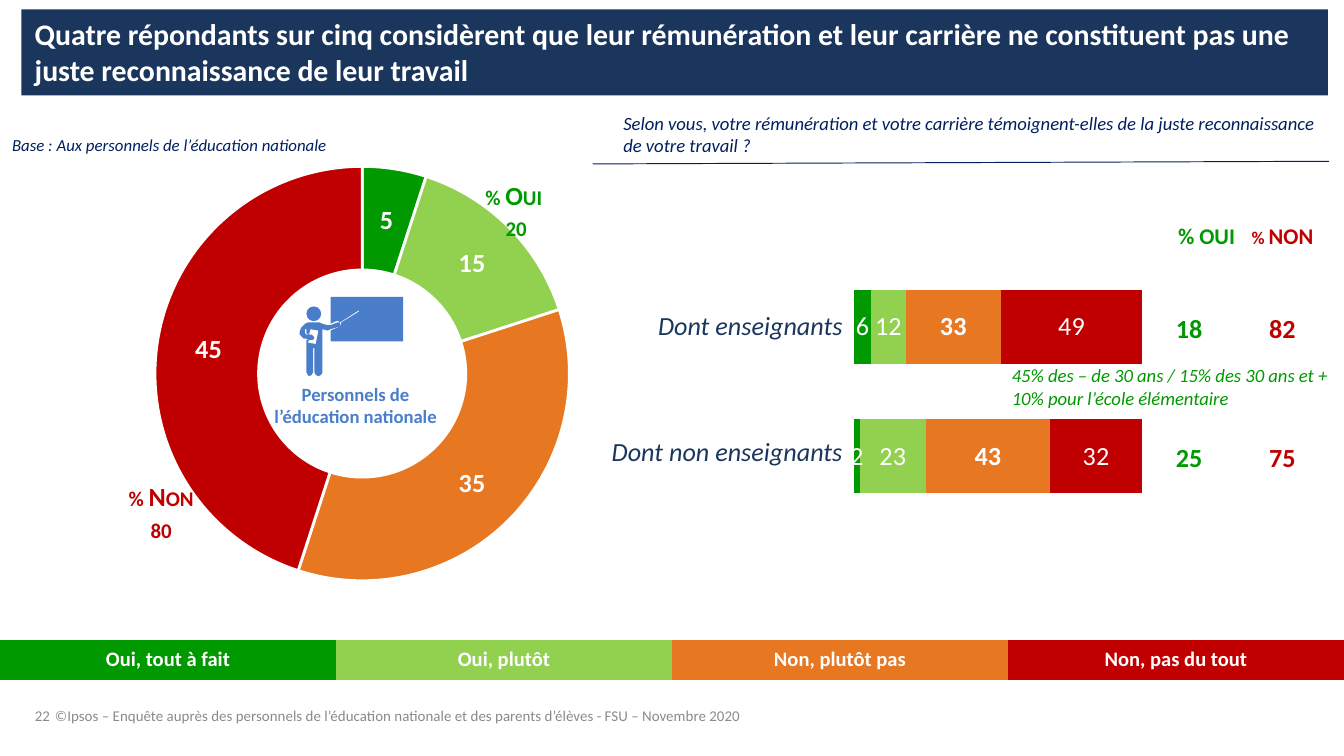
from lxml import etree
from pptx import Presentation
from pptx.chart.data import CategoryChartData
from pptx.dml.color import RGBColor
from pptx.enum.chart import XL_CHART_TYPE
from pptx.enum.shapes import MSO_CONNECTOR, MSO_SHAPE
from pptx.enum.text import MSO_ANCHOR, PP_ALIGN
from pptx.oxml import parse_xml
from pptx.oxml.ns import nsdecls, qn
from pptx.util import Inches, Pt

FONT = "Calibri"
COLORS = {
    "yes": "009900", "rather_yes": "92D050", "rather_no": "E87722", "no": "C00000",
    "navy": "1B365D", "ink": "002060", "icon": "4A7ECA", "grey": "888B8D",
    "white": "FFFFFF",
}
ANSWERS = {"yes": "Oui, tout à fait", "rather_yes": "Oui, plutôt",
           "rather_no": "Non, plutôt pas", "no": "Non, pas du tout"}
PLAIN_TABLE = "{2D5ABB26-0587-4C30-8999-92F81FD0307C}"

# Teacher icon outlines, in hundredths of an inch
BOARD = [(252, 239), (253, 240), (267, 231), (267, 232), (254, 240), (253, 243),
         (246, 246), (246, 254), (300, 254), (300, 221), (246, 221), (246, 241),
         (250, 239)]
TEACHER = [(226, 252), (228, 252), (230, 253), (233, 253), (234, 251), (232, 249),
           (228, 249), (227, 248), (227, 245), (228, 245), (228, 248), (230, 249),
           (231, 245), (237, 246), (235, 256), (229, 255), (230, 253), (228, 253),
           (228, 277), (229, 279), (230, 280), (232, 279), (233, 277), (233, 259),
           (234, 259), (234, 277), (235, 279), (237, 280), (239, 279), (240, 277),
           (240, 245), (244, 246), (246, 245), (253, 243), (253, 240), (251, 240),
           (246, 242), (244, 242), (240, 241), (238, 240), (229, 240), (227, 241),
           (224, 244), (223, 247), (223, 249)]


def color(name):
    return RGBColor.from_string(COLORS[name])


def style_font(font, size, tint, bold=False, italic=False):
    font.name, font.size = FONT, Pt(size)
    font.bold, font.italic = bold, italic
    font.color.rgb = color(tint)


def write(frame, text, size=10, tint="ink", bold=False, italic=False,
          small_caps=False, align=PP_ALIGN.LEFT):
    """Each newline starts a paragraph; a vertical tab breaks the line."""
    for i, line in enumerate(text.split("\n")):
        paragraph = frame.add_paragraph() if i else frame.paragraphs[0]
        paragraph.alignment = align
        for j, part in enumerate(line.split("\v")):
            if j:
                paragraph.add_line_break()
            run = paragraph.add_run()
            run.text = part
            style_font(run.font, size, tint, bold, italic)
            if small_caps:
                run._r.get_or_add_rPr().set("cap", "small")


class SurveySlide:
    def __init__(self, slide):
        self.shapes = slide.shapes

    def text(self, box, text, anchor=MSO_ANCHOR.TOP, insets=(0.1, 0.05, 0.1, 0.05),
             **style):
        frame = self.shapes.add_textbox(*map(Inches, box)).text_frame
        self.set_frame(frame, anchor, insets)
        write(frame, text, **style)

    def set_frame(self, frame, anchor, insets):
        frame.word_wrap, frame.vertical_anchor = True, anchor
        (frame.margin_left, frame.margin_top,
         frame.margin_right, frame.margin_bottom) = map(Inches, insets)

    def paint(self, shape, tint):
        shape.shadow.inherit = False
        shape.fill.solid()
        shape.fill.fore_color.rgb = color(tint)
        shape.line.fill.background()

    def shape(self, kind, box, tint):
        shape = self.shapes.add_shape(kind, *map(Inches, box))
        self.paint(shape, tint)
        return shape

    def outline(self, points, tint):
        builder = self.shapes.build_freeform(*points[0], scale=Inches(0.01))
        builder.add_line_segments(points[1:], close=True)
        self.paint(builder.convert_to_shape(), tint)

    def line(self, start, end, tint, width):
        rule = self.shapes.add_connector(
            MSO_CONNECTOR.STRAIGHT, *map(Inches, start + end))
        rule.line.color.rgb, rule.line.width = color(tint), Pt(width)
        etree.SubElement(rule._element.spPr, qn("a:effectLst"))

    def table(self, box, heights, rows):
        """Each cell is (text, fill, insets, style)."""
        table = self.shapes.add_table(
            len(rows), len(rows[0]), *map(Inches, box)).table
        table.first_row = table.horz_banding = False
        table._tbl.tblPr.find(qn("a:tableStyleId")).text = PLAIN_TABLE
        for row, height, contents in zip(table.rows, heights, rows):
            row.height = Inches(height)
            for cell, (text, fill, insets, style) in zip(row.cells, contents):
                cell.vertical_anchor = MSO_ANCHOR.MIDDLE
                (cell.margin_left, cell.margin_top,
                 cell.margin_right, cell.margin_bottom) = map(Inches, insets)
                if fill:
                    cell.fill.solid()
                    cell.fill.fore_color.rgb = color(fill)
                else:
                    cell.fill.background()
                write(cell.text_frame, text, bold=True, align=PP_ALIGN.CENTER, **style)

    def chart(self, kind, box, categories, series):
        data = CategoryChartData()
        data.categories = categories
        for i, values in enumerate(series, 1):
            data.add_series(f"Series {i}", values)
        chart = self.shapes.add_chart(kind, *map(Inches, box), data).chart
        chart.has_legend = chart.has_title = False
        style_font(chart.font, 10, "ink")
        return chart

    def labels(self, series, bold):
        series.data_labels.show_value = True
        style_font(series.data_labels.font, 14, "white", bold)

    def doughnut(self, box, values):
        chart = self.chart(XL_CHART_TYPE.DOUGHNUT, box, "1234", [values])
        ring = chart.plots[0].series[0]
        self.labels(ring, True)
        for i, tint in enumerate(ANSWERS):
            part = ring.points[i].format
            part.fill.solid()
            part.fill.fore_color.rgb = color(tint)
            part.line.color.rgb, part.line.width = color("white"), Pt(1.5)
        chart._chartSpace.find(".//" + qn("c:holeSize")).set("val", "65")

    def stacked_bars(self, box, series):
        chart = self.chart(XL_CHART_TYPE.BAR_STACKED_100, box, "12", series)
        plot = chart.plots[0]
        plot.gap_width, plot.overlap = 75, 100
        for part, tint in zip(plot.series, ANSWERS):
            part.format.fill.solid()
            part.format.fill.fore_color.rgb = color(tint)
            self.labels(part, tint == "rather_no")
        chart.category_axis.reverse_order = True
        chart.value_axis.has_major_gridlines = False
        chart.value_axis.minimum_scale, chart.value_axis.maximum_scale = 0, 1
        chart.category_axis.visible = chart.value_axis.visible = False
        # Leave room for the row names on the left
        area = chart._chartSpace.find(".//" + qn("c:plotArea"))
        for old in area.findall(qn("c:layout")):
            area.remove(old)
        sizes = "".join(f'<c:{tag} val="{value}"/>' for tag, value in
                        (("x", 0.28), ("y", 0), ("w", 0.72), ("h", 1)))
        area.insert(0, parse_xml(
            f'<c:layout {nsdecls("c")}><c:manualLayout><c:layoutTarget val="inner"/>'
            f'<c:xMode val="edge"/><c:yMode val="edge"/>{sizes}'
            '</c:manualLayout></c:layout>'))


def main():
    deck = Presentation()
    deck.slide_width, deck.slide_height = Inches(10), Inches(10 * 9 / 16)
    page = SurveySlide(deck.slides.add_slide(deck.slide_layouts[6]))
    middle, center = MSO_ANCHOR.MIDDLE, PP_ALIGN.CENTER

    # Overall result
    page.doughnut((0.85, 1.1, 3.69, 3.36), (5, 15, 35, 45))

    # Title, question and base
    title = page.shape(MSO_SHAPE.RECTANGLE, (0.16, 0.07, 9.72, 0.64), "navy").text_frame
    page.set_frame(title, MSO_ANCHOR.TOP, (0.1, 0.05, 0.1, 0.05))
    write(title, "Quatre répondants sur cinq considèrent que leur rémunération et leur "
          "carrière ne constituent pas une juste reconnaissance de leur travail",
          size=16, tint="white", bold=True)
    page.text((4.54, 0.75, 5.46, 0.49), "Selon vous, votre rémunération et votre carrière "
              "témoignent-elles de la juste reconnaissance de votre travail ?",
              anchor=middle, italic=True)
    page.line((4.41, 1.22), (9.89, 1.2), "ink", 0.5)
    page.text((0.09, 1, 2.39, 0.15), "Base : Aux personnels de l’éducation nationale",
              insets=(0, 0, 0, 0), size=9, italic=True)

    # Totals beside the ring
    for box, text, tint in (((3.4, 1.36, 0.88, 0.41), "% Oui \v20", "yes"),
                            ((0.68, 3.54, 1.04, 0.54), "% Non\v80", "no")):
        page.text(box, text, anchor=middle, size=14, tint=tint, bold=True,
                  small_caps=True, align=center)

    # Colour key
    key = [(answer, tint, (0.1, 0.05, 0.1, 0.05), {"size": 11, "tint": "white"})
           for tint, answer in ANSWERS.items()]
    page.table((0, 4.76, 10, 0.3), [0.3], [key])

    # Ring centre
    page.text((1.89, 2.8, 1.51, 0.44), "Personnels de l’éducation nationale",
              tint="icon", bold=True, align=center)
    page.outline(BOARD, "icon")
    page.shape(MSO_SHAPE.OVAL, (2.28, 2.28, 0.11, 0.11), "icon")
    page.outline(TEACHER, "icon")

    # Results by group
    page.stacked_bars((5.52, 1.95, 2.98, 1.93), [(6, 2), (12, 23), (33, 43), (49, 32)])
    for top, group in ((2.25, "Dont enseignants"), (3.19, "Dont non enseignants")):
        page.text((4.41, top, 1.96, 0.34), group, size=14, tint="navy", italic=True,
                  align=PP_ALIGN.RIGHT)
    totals = [[(text, None, (0.26 if text == "% OUI" else 0, 0.01, 0, 0),
                {"size": 12 if "%" in text else 14, "tint": tint,
                 "small_caps": text == "% NON"})
               for text, tint in zip(row, ("yes", "no"))]
              for row in (("% OUI", "% NON"), ("18", "82"), ("25", "75"))]
    page.table((8.5, 1.54, 1.39, 2.34), [0.43, 0.96, 0.96], totals)
    page.text((7.43, 2.66, 2.57, 0.44), "45% des – de 30 ans / 15% des 30 ans et +\n"
              "10% pour l’école élémentaire", insets=(0.1, 0.05, 0, 0.05),
              tint="yes", italic=True)

    # Footer
    page.text((0.26, 5.13, 0.34, 0.26), "22", anchor=MSO_ANCHOR.BOTTOM,
              insets=(0, 0, 0, 0), size=8, tint="grey")
    page.text((0.31, 5.21, 7.39, 0.2), "©Ipsos – Enquête auprès des personnels de "
              "l’éducation nationale et des parents d’élèves - FSU – Novembre 2020",
              size=8, tint="grey")

    deck.save("out.pptx")


if __name__ == "__main__":
    main()
